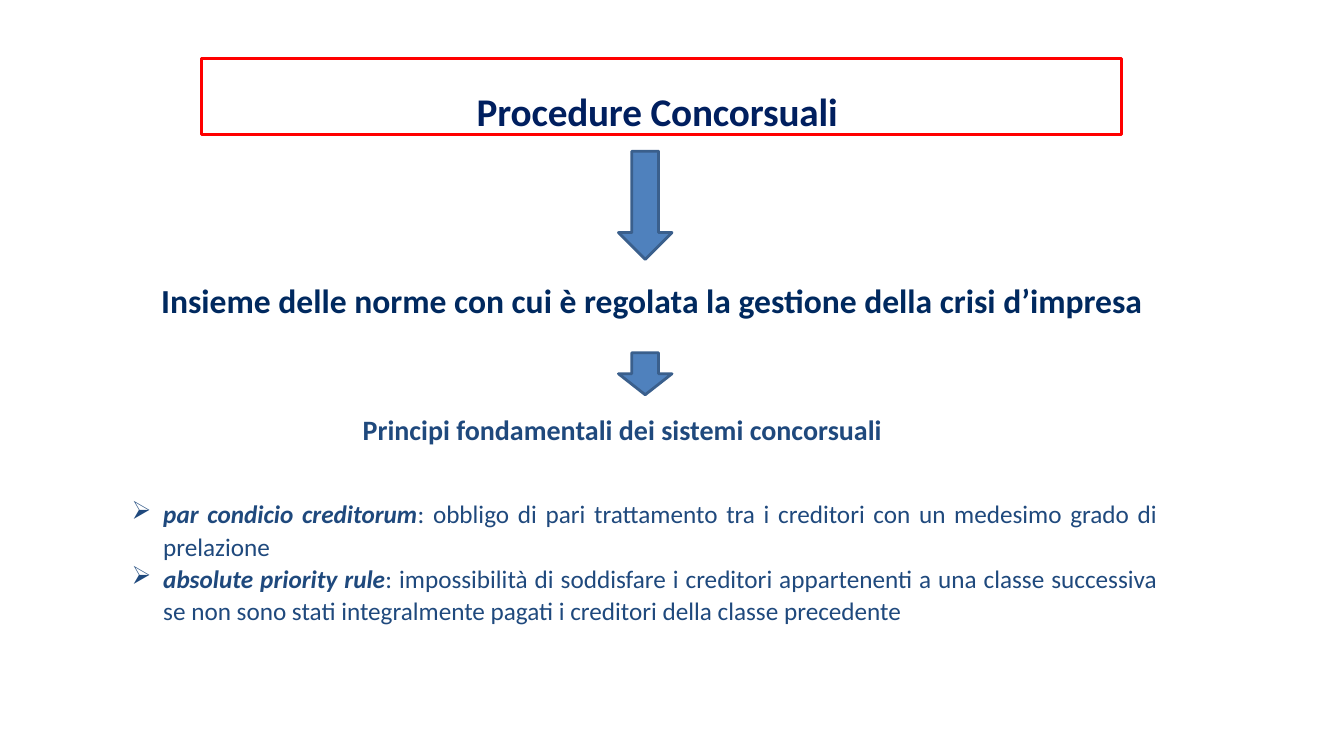
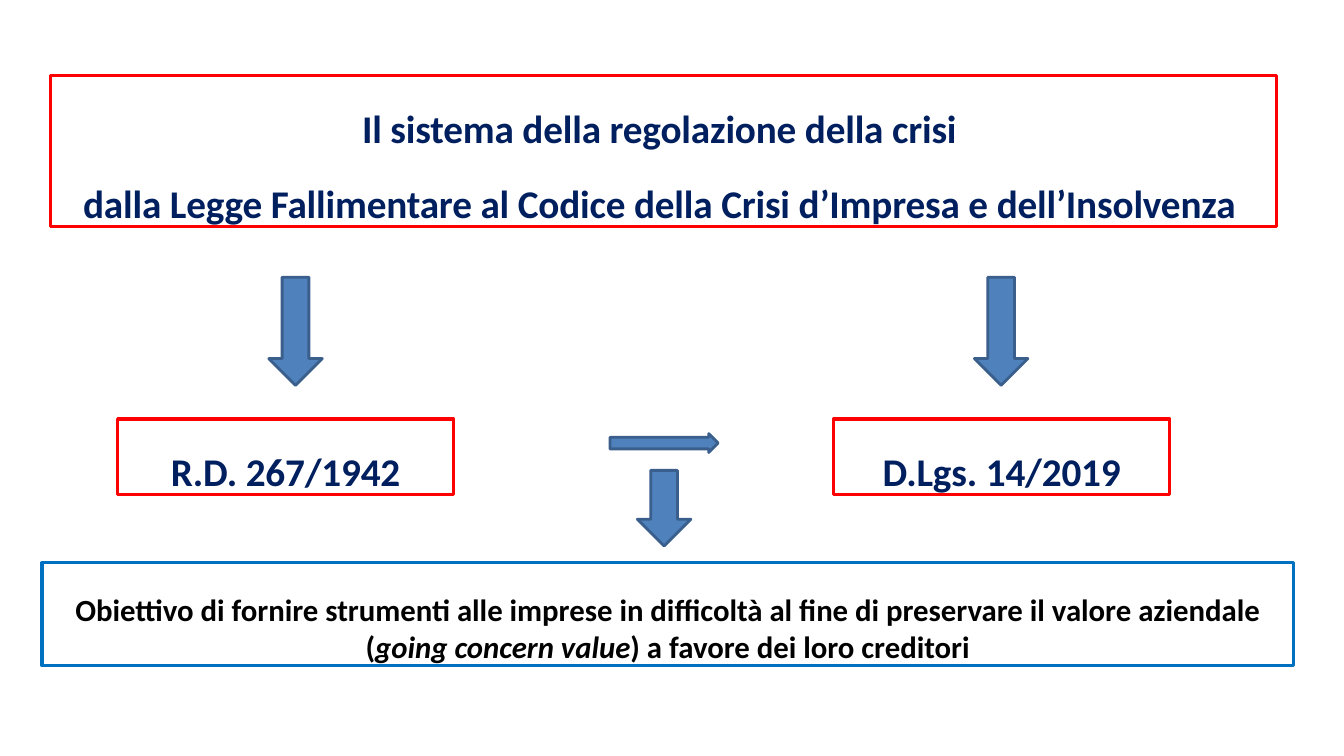
import pptx
import pptx.dml.color
import pptx.enum.shapes
import pptx.enum.text
import pptx.util
from lxml import etree

PX = 9525  # EMU in one px, 96 px to the inch
FONT = "Calibri"
NAVY, DEEP, BLUE, BLACK = "001F5F", "00295F", "1F497D", "000000"
RED, AZURE = "FF0000", "0070C0"
ARROW_FILL, ARROW_LINE = "4F81BD", "3A5F8C"
RGB = pptx.dml.color.RGBColor.from_string
MSO = pptx.enum.shapes.MSO_SHAPE
ALIGN = pptx.enum.text.PP_ALIGN
NS = "{http://schemas.openxmlformats.org/drawingml/2006/main}"


def write(tf, paragraphs, size, color, align, bullet=None, tracking=None):
    """Fill a frame; each paragraph is a list of (text, bold, italic) runs."""
    tf.word_wrap = True
    for i, runs in enumerate(paragraphs):
        p = tf.paragraphs[0] if i == 0 else tf.add_paragraph()
        p.alignment = align
        if bullet:
            p.line_spacing = 1.07
            pPr = p._p.get_or_add_pPr()
            pPr.set("marL", str(66 * PX))
            pPr.set("indent", str(-30 * PX))
            etree.SubElement(pPr, NS + "buChar").set("char", bullet)
        elif i:
            p.space_before = pptx.util.Pt(20)
        for text, bold, italic in runs:
            r = p.add_run()
            r.text = text
            r.font.name, r.font.size = FONT, pptx.util.Pt(size)
            r.font.bold, r.font.italic = bold, italic
            r.font.color.rgb = RGB(color)
            if tracking:
                r._r.get_or_add_rPr().set("spc", str(tracking))


def frame(sp, box, line, paragraphs, size, color, tracking=None):
    """Place an outlined, unfilled box with its text set below a top inset."""
    sp.left, sp.top, sp.width, sp.height = [v * PX for v in box]
    sp.fill.background()
    sp.line.color.rgb = RGB(line)
    sp.line.width = pptx.util.Pt(2.25)
    tf = sp.text_frame
    tf.auto_size = pptx.enum.text.MSO_AUTO_SIZE.NONE
    tf.vertical_anchor = pptx.enum.text.MSO_ANCHOR.TOP
    tf.margin_left = tf.margin_right = tf.margin_bottom = 0
    tf.margin_top = 27 * PX
    write(tf, paragraphs, size, color, ALIGN.CENTER, tracking=tracking)


prs = pptx.Presentation()
prs.slide_width, prs.slide_height = 1280 * PX, 720 * PX

# Slides with their framed titles
titles = [
    ((192, 56, 876, 72), ["Procedure Concorsuali "]),
    ((48, 72, 1168, 144), [
        "Il sistema della regolazione della crisi ",
        "dalla Legge Fallimentare al Codice della Crisi d’Impresa e dell’Insolvenza "]),
]
slides = []
for box, lines in titles:
    s = prs.slides.add_slide(prs.slide_layouts[5])
    frame(s.shapes.title, box, RED, [[(t, True, False)] for t in lines], 28, NAVY, -10)
    slides.append(s)
principles, reform = slides

# Definition, heading and bulleted principles
texts = [
    ((144, 262, 984, 48), 24, DEEP, ALIGN.LEFT, None, [
        [("Insieme delle norme con cui è regolata la gestione della crisi d’impresa", True, False)]]),
    ((336, 388, 639, 42), 20, BLUE, ALIGN.LEFT, None, [
        [("Principi fondamentali dei sistemi concorsuali", True, False)]]),
    ((80, 468, 1032, 132), 18, BLUE, ALIGN.JUSTIFY, "➢", [
        [("par condicio creditorum", True, True),
         (": obbligo di pari trattamento tra i creditori con un medesimo grado di prelazione",
          False, False)],
        [("absolute priority rule", True, True),
         (": impossibilità di soddisfare i creditori appartenenti a una classe successiva "
          "se non sono stati integralmente pagati i creditori della classe precedente",
          False, False)]]),
]
for box, size, color, align, bullet, paragraphs in texts:
    sp = principles.shapes.add_textbox(*[v * PX for v in box])
    write(sp.text_frame, paragraphs, size, color, align, bullet)

# The two laws and the goal of the reform
boxes = [
    ((112, 399, 320, 72), RED, [("R.D. 267/1942", True, False)], 28, NAVY, -10),
    ((794, 399, 320, 72), RED, [("D.Lgs. 14/2019", True, False)], 28, NAVY, -10),
    ((40, 536, 1192, 98), AZURE, [
        ("Obiettivo di fornire strumenti alle imprese in difficoltà al fine di preservare "
         "il valore aziendale (", True, False),
        ("going concern value", True, True),
        (") a favore dei loro creditori", True, False)], 22, BLACK, None),
]
for box, line, runs, size, color, tracking in boxes:
    sp = reform.shapes.add_shape(MSO.RECTANGLE, *[v * PX for v in box])
    sp.shadow.inherit = False
    frame(sp, box, line, [runs], size, color, tracking)

# Block arrows
arrows = [
    (principles, MSO.DOWN_ARROW, (589, 144, 51, 103)),
    (principles, MSO.DOWN_ARROW, (589, 336, 51, 40)),
    (reform, MSO.DOWN_ARROW, (256, 264, 51, 103)),
    (reform, MSO.DOWN_ARROW, (928, 264, 51, 103)),
    (reform, MSO.DOWN_ARROW, (607, 448, 51, 72)),
    (reform, MSO.RIGHT_ARROW, (581, 413, 103, 18)),
]
for s, kind, box in arrows:
    sp = s.shapes.add_shape(kind, *[v * PX for v in box])
    sp.shadow.inherit = False
    sp.fill.solid()
    sp.fill.fore_color.rgb = RGB(ARROW_FILL)
    sp.line.color.rgb = RGB(ARROW_LINE)
    sp.line.width = pptx.util.Pt(2)
    if kind == MSO.RIGHT_ARROW:
        sp.adjustments[0] = 0.62

prs.save("out.pptx")
